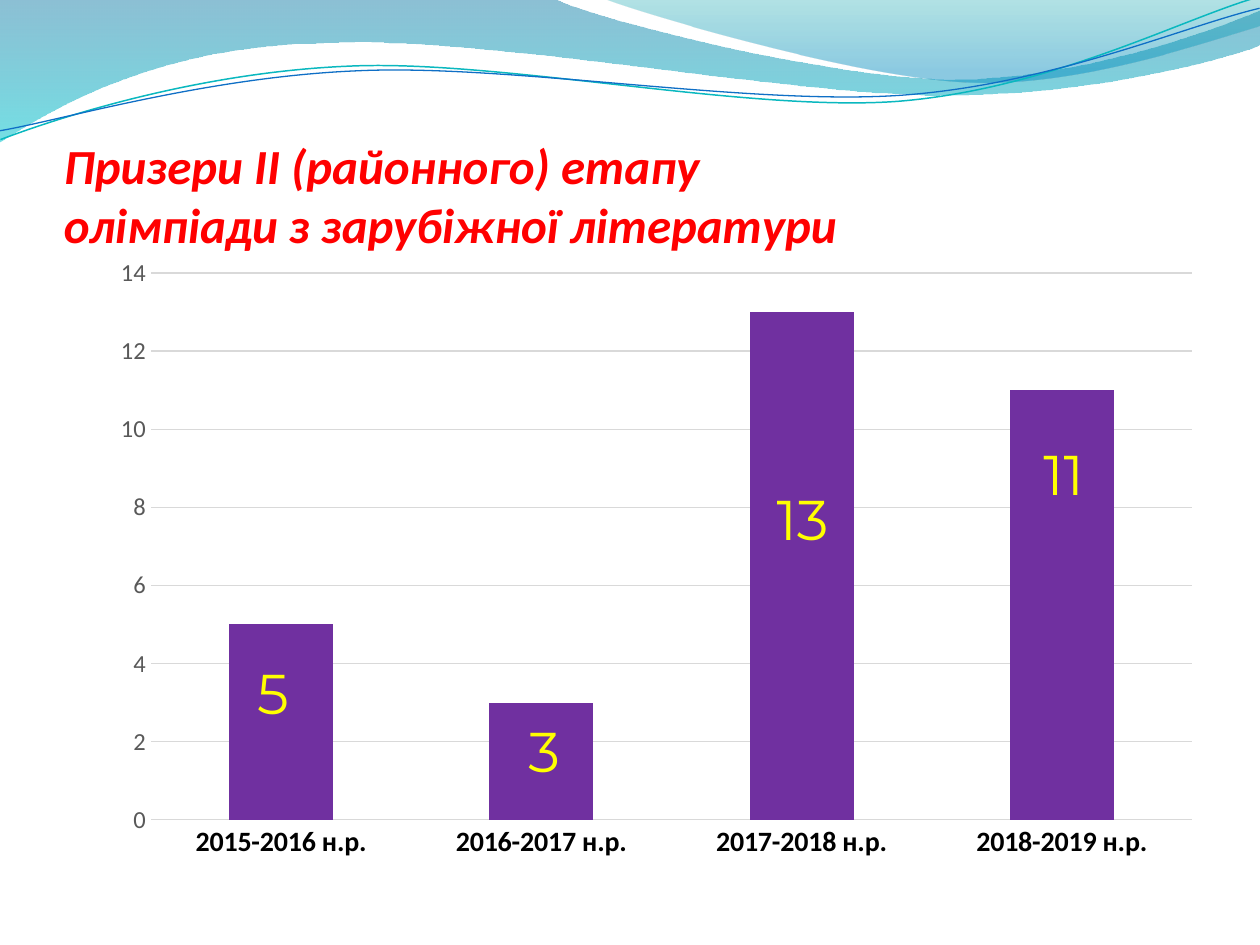
from dataclasses import dataclass

from lxml import etree
from pptx import Presentation
from pptx import util as u
from pptx.chart import data as chart_data
from pptx.dml import color
from pptx.enum import chart as chart_enum, text
from pptx.oxml import ns, parse_xml

EMU_PER_PX = 914400 / 126


def px(length):
    return u.Emu(round(length * EMU_PER_PX))


def rgb(value):
    return color.RGBColor.from_string(value)


def layout_xml(**values):
    target = '<c:layoutTarget val="inner"/>' if "w" in values else ""
    modes = '<c:xMode val="edge"/><c:yMode val="edge"/>' if target else ""
    sizes = "".join(f'<c:{name} val="{value:.4f}"/>' for name, value in values.items())
    return parse_xml(
        f'<c:layout {ns.nsdecls("c")}><c:manualLayout>{target}{modes}{sizes}'
        "</c:manualLayout></c:layout>"
    )


def bend(shape, segments):
    lines = iter(shape.element.findall(".//" + ns.qn("a:lnTo")))
    for segment in segments:
        first = next(lines)
        if len(segment) == 6:
            curve = etree.Element(ns.qn("a:cubicBezTo"))
            first.addprevious(curve)
            for line in (first, next(lines), next(lines)):
                curve.append(line[0])
                line.getparent().remove(line)


@dataclass
class Theme:
    font: str = "Calibri"
    label_font: str = "Montserrat"
    title: str = "FF0000"
    bar: str = "7030A0"
    label: str = "FFFF00"
    category: str = "000000"
    value: str = "595959"
    grid: str = "D9D9D9"
    teal_line: str = "0AB8BF"
    blue_line: str = "0F6FC6"
    left_wave: tuple = ((0, "0074A1", 45), (1, "00C6CF", 55))
    right_wave: tuple = ((0, "00A1A9", 30), (0.8, "008BBF", 45))
    title_size: int = 28
    label_size: int = 32
    category_size: int = 16
    value_size: int = 14
    chart_size: int = 10


class SlideBuilder:
    def __init__(self, slide, theme):
        self.slide = slide
        self.theme = theme

    def set_font(self, font, size, value, name=None, bold=False, italic=False):
        font.name = name or self.theme.font
        font.size = u.Pt(size)
        font.color.rgb = rgb(value)
        font.bold = bold
        font.italic = italic

    def outline(self, start, segments, closed):
        points = [(px(segment[i]), px(segment[i + 1]))
                  for segment in segments for i in range(0, len(segment), 2)]
        builder = self.slide.shapes.build_freeform(px(start[0]), px(start[1]))
        builder.add_line_segments(points, close=closed)
        shape = builder.convert_to_shape()
        bend(shape, segments)
        shape.shadow.inherit = False
        return shape

    def wave(self, start, segments, stops):
        shape = self.outline(start, segments, True)
        shape.line.fill.background()
        shape.fill.gradient()
        shape.fill.gradient_angle = 270
        for gradient_stop, (position, value, _) in zip(shape.fill.gradient_stops, stops):
            gradient_stop.position = position
            gradient_stop.color.rgb = rgb(value)
        for element, (_, _, opacity) in zip(shape.element.iter(ns.qn("a:srgbClr")), stops):
            element.append(parse_xml(f'<a:alpha {ns.nsdecls("a")} val="{opacity * 1000}"/>'))

    def line(self, start, segments, value, width):
        shape = self.outline(start, segments, False)
        shape.rotation = 357.3
        shape.fill.background()
        shape.line.color.rgb = rgb(value)
        shape.line.width = u.Pt(width)

    def title(self, wording, left, top, width, height):
        shape = self.slide.shapes.title
        shape.element.getparent().append(shape.element)
        shape.left, shape.top, shape.width, shape.height = map(px, (left, top, width, height))
        frame = shape.text_frame
        frame.auto_size = text.MSO_AUTO_SIZE.NONE
        frame.vertical_anchor = text.MSO_ANCHOR.BOTTOM
        frame.margin_left = frame.margin_right = frame.margin_bottom = 0
        frame.text = wording
        paragraph = frame.paragraphs[0]
        paragraph.alignment = text.PP_ALIGN.LEFT
        self.set_font(paragraph.font, self.theme.title_size, self.theme.title,
                      bold=True, italic=True)

    def column_chart(self, categories, values, label_shifts, box, plot_box):
        theme = self.theme
        left, top, width, height = box
        data = chart_data.CategoryChartData()
        data.categories = categories
        data.add_series("Series 1", values)
        chart = self.slide.shapes.add_chart(
            chart_enum.XL_CHART_TYPE.COLUMN_CLUSTERED, *map(px, box), data).chart
        chart.has_title = chart.has_legend = False
        self.set_font(chart.font, theme.chart_size, theme.category)

        for axis in (chart.category_axis, chart.value_axis):
            axis.major_tick_mark = axis.minor_tick_mark = chart_enum.XL_TICK_MARK.NONE
            axis.format.line.fill.background()
        self.set_font(chart.category_axis.tick_labels.font, theme.category_size,
                      theme.category, bold=True)
        value_axis = chart.value_axis
        self.set_font(value_axis.tick_labels.font, theme.value_size, theme.value)
        value_axis.minimum_scale, value_axis.maximum_scale, value_axis.major_unit = 0, 14, 2
        grid_line = value_axis.major_gridlines.format.line
        grid_line.color.rgb = rgb(theme.grid)
        grid_line.width = u.Pt(0.75)

        plot = chart.plots[0]
        plot.gap_width = 150
        plot.vary_by_categories = False
        series = plot.series[0]
        series.format.fill.solid()
        series.format.fill.fore_color.rgb = rgb(theme.bar)
        series.data_labels.show_value = True
        point_labels = [series.points[index].data_label for index in range(len(values))]
        for label in (series.data_labels, *point_labels):
            self.set_font(label.font, theme.label_size, theme.label, theme.label_font)
            label.position = chart_enum.XL_LABEL_POSITION.CENTER
        for element, (x, y) in zip(chart.element.iter(ns.qn("c:dLbl")), label_shifts):
            element.insert(1, layout_xml(x=x / width, y=y / height))
        for element in chart.element.iter(ns.qn("c:showLeaderLines")):
            element.set("val", "0")

        plot_area = chart.element.find(".//" + ns.qn("c:plotArea"))
        for element in plot_area.findall(ns.qn("c:layout")):
            plot_area.remove(element)
        plot_left, plot_top, plot_width, plot_height = plot_box
        plot_area.insert(0, layout_xml(
            x=(plot_left - left) / width, y=(plot_top - top) / height,
            w=plot_width / width, h=plot_height / height))


def main():
    presentation = Presentation()
    presentation.slide_width, presentation.slide_height = px(1260), px(945)
    theme = Theme()
    builder = SlideBuilder(presentation.slides.add_slide(presentation.slide_layouts[5]), theme)

    builder.wave((0, 0), [
        (554, -1), (600, 21, 837, 79, 955, 79), (1075, 79, 1207, 33, 1260, 11),
        (1261, 45), (1239, 55, 1096, 96, 940, 95), (784, 95, 481, 35, 324, 43),
        (163, 45, 58, 105, -1, 142)], theme.left_wave)
    builder.wave((604, -1), [
        (641, 14, 859, 78, 969, 82), (1079, 87, 1211, 40, 1260, 26), (1260, 0)],
        theme.right_wave)
    builder.line((-2, 110), [
        (59, 90, 200, 52, 350, 53), (499, 53, 745, 118, 896, 114),
        (1049, 109, 1184, 45, 1260, 27)], theme.teal_line, 0.85)
    builder.line((-2, 101), [
        (57, 94, 207, 57, 358, 58), (509, 58, 750, 112, 902, 108),
        (1052, 104, 1187, 52, 1262, 38)], theme.blue_line, 0.75)

    builder.title("Призери ІІ (районного) етапу\vолімпіади з зарубіжної літератури",
                  64, 75, 1134, 178)
    years = [f"{year}-{year + 1} н.р." for year in range(2015, 2019)]
    builder.column_chart(years, (5, 3, 13, 11), ((-8, -28), (3, -9), (1, -46), (2, -130)),
                         (98, 246, 1116, 625), (151, 273, 1041, 547))
    presentation.save("out.pptx")


if __name__ == "__main__":
    main()
